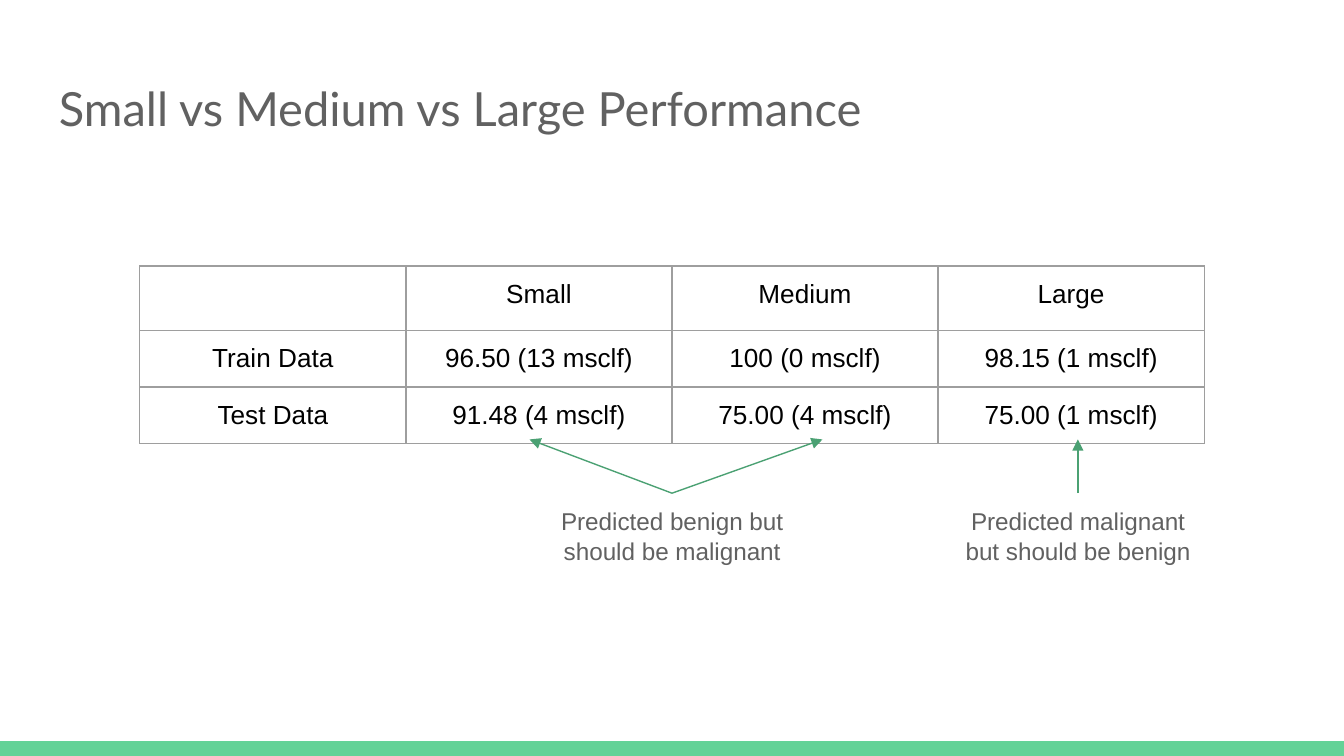
from typing import NamedTuple

from lxml import etree
from pptx import Presentation
from pptx.dml.color import RGBColor
from pptx.enum import shapes, text
from pptx.oxml import ns
from pptx.util import Inches, Pt

GREEN = RGBColor(0x63, 0xD2, 0x97)
DARK = RGBColor(0x4B, 0xA1, 0x73)
GRAY = RGBColor(0x61, 0x61, 0x61)
EDGE = RGBColor(0x9E, 0x9E, 0x9E)
BLACK = RGBColor(0, 0, 0)
WIDE = Inches(10)
HIGH = WIDE * 9 // 16
PAD = Inches(0.1)
MID = text.PP_ALIGN.CENTER


class Note(NamedTuple):
    words: str
    left: float


class Arrow(NamedTuple):
    start: float
    end: float


ROWS = [
    ["", "Small", "Medium", "Large"],
    ["Train Data", "96.50 (13 msclf)", "100 (0 msclf)", "98.15 (1 msclf)"],
    ["Test Data", "91.48 (4 msclf)", "75.00 (4 msclf)", "75.00 (1 msclf)"],
]
NOTES = [
    Note("Predicted benign but should be malignant", 4.01),
    Note("Predicted malignant but should be benign", 7.03),
]
ARROWS = [Arrow(5, 3.94), Arrow(5, 6.12), Arrow(8.02, 8.02)]
COL, ROW = 1.98, 0.42
TIP, BASE = 3.27, 3.67


def write(frame, words: str, *, size: float, color: RGBColor,
          font: str = "Arial", align=MID) -> None:
    par = frame.paragraphs[0]
    par.alignment = align
    run = par.add_run()
    run.text = words
    run.font.size = Pt(size)
    run.font.name = font
    run.font.color.rgb = color


def add_box(slide, left: float, top: float, width: float, height: float):
    box = slide.shapes.add_textbox(
        Inches(left), Inches(top), Inches(width), Inches(height))
    frame = box.text_frame
    frame.word_wrap = True
    frame.margin_left = frame.margin_right = PAD
    frame.margin_top = frame.margin_bottom = PAD
    return frame


def add_edges(cell) -> None:
    props = cell._tc.get_or_add_tcPr()
    for i, side in enumerate(("lnL", "lnR", "lnT", "lnB")):
        line = etree.Element(ns.qn(f"a:{side}"), w=str(Pt(0.75)))
        fill = etree.SubElement(line, ns.qn("a:solidFill"))
        etree.SubElement(fill, ns.qn("a:srgbClr"), val=str(EDGE))
        props.insert(i, line)


def add_grid(slide) -> None:
    rows, cols = len(ROWS), len(ROWS[0])
    table = slide.shapes.add_table(
        rows, cols, Inches(1.04), Inches(1.98),
        Inches(COL * cols), Inches(ROW * rows)).table
    table.first_row = table.horz_banding = False
    for r, row in enumerate(ROWS):
        for c, words in enumerate(row):
            cell = table.cell(r, c)
            cell.margin_left = cell.margin_right = cell.margin_top = PAD
            cell.margin_bottom = Inches(0.08)
            cell.fill.background()
            add_edges(cell)
            if words:
                write(cell.text_frame, words, size=14, color=BLACK)


def add_arrow(slide, arrow: Arrow) -> None:
    line = slide.shapes.add_connector(
        shapes.MSO_CONNECTOR.STRAIGHT, Inches(arrow.start), Inches(BASE),
        Inches(arrow.end), Inches(TIP))
    line.line.color.rgb = DARK
    line.line.width = Pt(0.75)
    etree.SubElement(line.line._get_or_add_ln(), ns.qn("a:tailEnd"),
                     type="triangle")
    etree.SubElement(line._element.spPr, ns.qn("a:effectLst"))


def main() -> None:
    deck = Presentation()
    deck.slide_width, deck.slide_height = WIDE, HIGH
    slide = deck.slides.add_slide(deck.slide_layouts[6])

    # Bottom band
    thick = Inches(0.11)
    band = slide.shapes.add_shape(
        shapes.MSO_SHAPE.RECTANGLE, 0, HIGH - thick, WIDE, thick)
    band.shadow.inherit = False
    band.fill.solid()
    band.fill.fore_color.rgb = GREEN
    band.line.fill.background()

    # Title
    write(add_box(slide, 0.34, 0.49, 9.32, 0.63),
          "Small vs Medium vs Large Performance", size=25.2, color=GRAY,
          font="Lato", align=text.PP_ALIGN.LEFT)

    # Results
    add_grid(slide)

    # Notes and their arrows
    for note in NOTES:
        write(add_box(slide, note.left, BASE, COL, 0.63), note.words,
              size=13, color=GRAY)
    for arrow in ARROWS:
        add_arrow(slide, arrow)

    deck.save("out.pptx")


if __name__ == "__main__":
    main()
